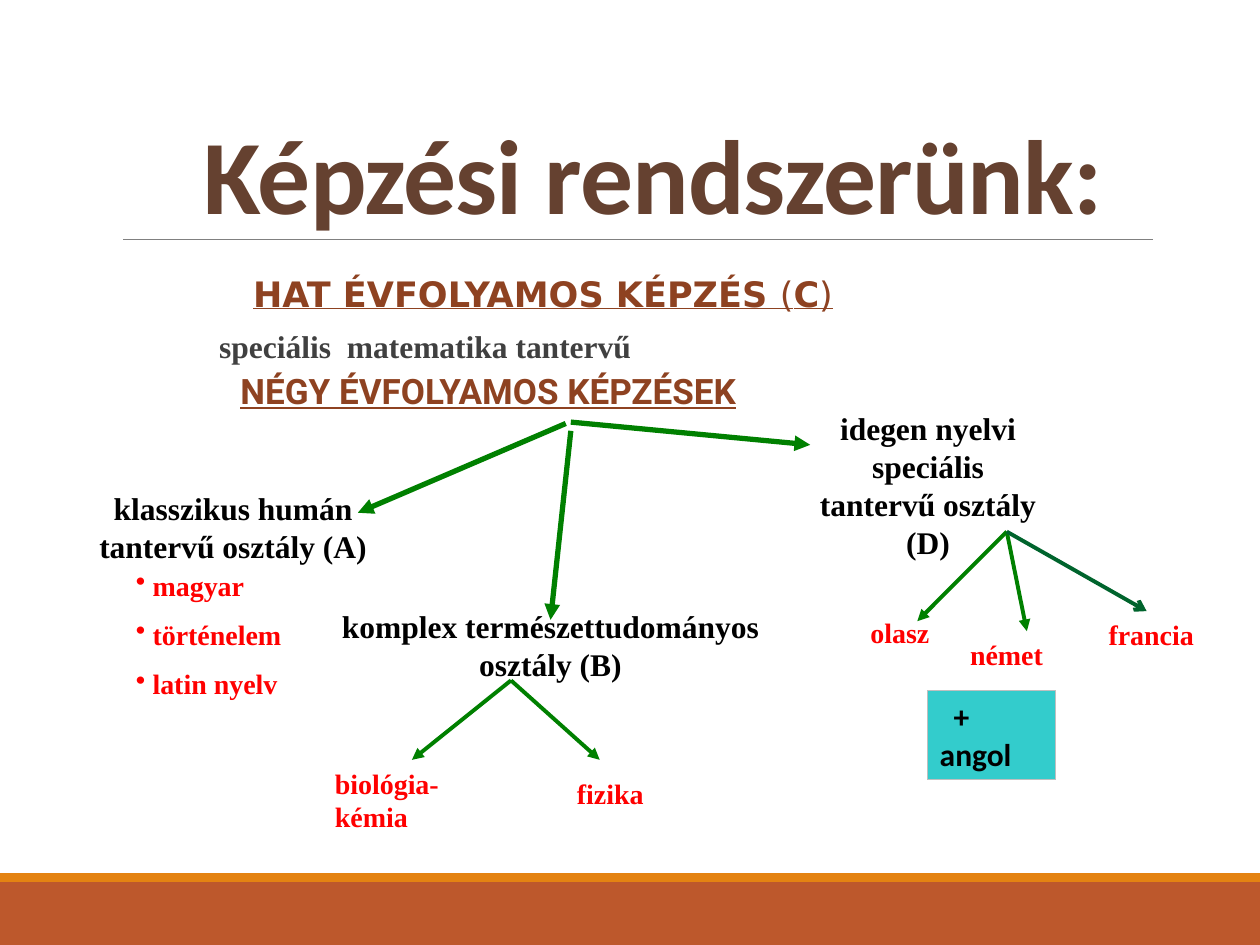
import pptx
import pptx.util
import pptx.dml.color
import pptx.enum.shapes
import pptx.enum.text
import pptx.oxml
from dataclasses import dataclass

Pt = pptx.util.Pt
Align = pptx.enum.text.PP_ALIGN
Anchor = pptx.enum.text.MSO_ANCHOR
NS = 'xmlns:a="http://schemas.openxmlformats.org/drawingml/2006/main"'


def rgb(code):
    return pptx.dml.color.RGBColor.from_string(code)


def node(tag, attrs=""):
    return pptx.oxml.parse_xml(f"<a:{tag} {NS} {attrs}/>")


@dataclass
class Theme:
    serif: str = "Times New Roman"
    sans: str = "Calibri"
    wide: str = "DejaVu Sans"
    slim: str = "Roboto"
    title: str = "654130"
    head: str = "8E4221"
    body: str = "404040"
    ink: str = "000000"
    leaf: str = "FF0000"
    arrow: str = "008000"
    dark: str = "00642D"
    rule: str = "808080"
    base: str = "BD582C"
    strip: str = "E48312"
    note: str = "33CCCC"
    edge: str = "BFBFBF"
    huge: float = 60.3
    large: int = 20
    mid: int = 18
    small: int = 16


class Board:
    """Draws on one slide; all lengths are points."""

    def __init__(self, slide, theme):
        self.shapes = slide.shapes
        self.theme = theme

    def rect(self, x, y, w, h, fill, edge=None):
        kind = pptx.enum.shapes.MSO_SHAPE.RECTANGLE
        shape = self.shapes.add_shape(kind, Pt(x), Pt(y), Pt(w), Pt(h))
        shape.shadow.inherit = False
        shape.fill.solid()
        shape.fill.fore_color.rgb = rgb(fill)
        if edge:
            shape.line.color.rgb = rgb(edge)
            shape.line.width = Pt(0.75)
        else:
            shape.line.fill.background()
        return shape

    def line(self, start, end, color, width, tip=None):
        kind = pptx.enum.shapes.MSO_CONNECTOR.STRAIGHT
        link = self.shapes.add_connector(kind, *map(Pt, start + end))
        link.line.color.rgb = rgb(color)
        link.line.width = Pt(width)
        if tip:
            link.line._get_or_add_ln().append(node("tailEnd", f'type="{tip}"'))
        link._element.spPr.append(node("effectLst"))

    def fan(self, ends, width):
        for start, end in ends:
            self.line(start, end, self.theme.arrow, width, "triangle")

    def box(self, x, y, w, h):
        frame = self.shapes.add_textbox(Pt(x), Pt(y), Pt(w), Pt(h)).text_frame
        frame.word_wrap = True
        return frame

    def run(self, para, text, font, size, color, bold=True, under=False):
        run = para.add_run()
        run.text = text
        run.font.name = font
        run.font.size = Pt(size)
        run.font.color.rgb = rgb(color)
        run.font.bold = bold
        run.font.underline = under
        return run

    def label(self, x, y, w, h, text):
        """Centred name of a class."""
        para = self.box(x, y, w, h).paragraphs[0]
        para.alignment = Align.CENTER
        self.run(para, text, self.theme.serif, self.theme.mid, self.theme.ink)

    def leaf(self, x, y, w, h, text):
        """Red name of a subject."""
        para = self.box(x, y, w, h).paragraphs[0]
        self.run(para, text, self.theme.serif, self.theme.small, self.theme.leaf)

    def head(self, x, y, w, h, parts, font, align):
        """Underlined heading; parts are (text, bold) pairs."""
        para = self.box(x, y, w, h).paragraphs[0]
        para.alignment = align
        for text, bold in parts:
            self.run(para, text, font, self.theme.large, self.theme.head, bold, True)

    def list(self, x, y, w, h, items):
        frame = self.box(x, y, w, h)
        for i, item in enumerate(items):
            para = frame.add_paragraph() if i else frame.paragraphs[0]
            para.space_before = Pt(9 if i else 0)
            props = para._p.get_or_add_pPr()
            props.set("marL", str(Pt(9.5)))
            props.set("indent", str(-Pt(9.5)))
            props.append(node("buChar", 'char="•"'))
            self.run(para, item, self.theme.serif, self.theme.small, self.theme.leaf)

    def title(self, x, y, w, h, text):
        frame = self.box(x, y, w, h)
        frame.vertical_anchor = Anchor.BOTTOM
        para = frame.paragraphs[0]
        para.line_spacing = 0.85
        run = self.run(para, text, self.theme.sans, self.theme.huge, self.theme.title)
        run.font._element.set("spc", "-50")

    def lead(self, x, y, w, h, text):
        frame = self.box(x, y, w, h)
        frame.margin_left = frame.margin_right = 0
        para = frame.paragraphs[0]
        para.line_spacing = 0.8
        self.run(para, text, self.theme.serif, self.theme.mid, self.theme.body)

    def note(self, x, y, w, h, top, low):
        shape = self.rect(x, y, w, h, self.theme.note, self.theme.edge)
        frame = shape.text_frame
        frame.word_wrap = True
        frame.vertical_anchor = Anchor.TOP
        para = frame.paragraphs[0]
        para.alignment = Align.LEFT
        para._p.get_or_add_pPr().set("indent", str(Pt(8)))
        style = self.theme.sans, self.theme.mid, self.theme.ink
        self.run(para, top, *style)
        para.add_line_break()
        self.run(para, low, *style)


def main():
    deck = pptx.Presentation()
    deck.slide_width, deck.slide_height = Pt(720), Pt(540)
    theme = Theme()
    board = Board(deck.slides.add_slide(deck.slide_layouts[6]), theme)

    board.rect(0, 504, 720, 36, theme.base)
    board.rect(0, 499, 720, 5, theme.strip)
    board.line((70.5, 136.8), (659, 136.8), theme.rule, 0.5)
    board.title(109, 82.8, 560, 55.4, "Képzési rendszerünk:")

    hat = [("HAT ÉVFOLYAMOS KÉPZÉS ", True), ("(", False), ("C", True), (")", False)]
    board.head(130.3, 151.9, 360, 31.7, hat, theme.wide, Align.CENTER)
    board.lead(125.3, 187.2, 291, 34.6, "speciális  matematika tantervű")
    four = [("NÉGY ÉVFOLYAMOS KÉPZÉSEK", True)]
    board.head(130.3, 207.4, 360, 31.7, four, theme.slim, Align.LEFT)

    board.fan([((323.3, 242), (204.5, 293)),
               ((326.2, 246.2), (314.6, 354.2)),
               ((326.2, 241.2), (463, 254.2))], 3)
    board.label(48.2, 275.8, 170, 50.4, "klasszikus humán tantervű osztály (A)")
    board.label(184.3, 343.4, 260.6, 51, "komplex természettudományos osztály (B)")
    board.label(456.5, 230.4, 147.6, 94.3, "idegen nyelvi speciális tantervű osztály (D)")

    board.list(70.6, 321.1, 101.5, 85, ["magyar", "történelem", "latin nyelv"])

    split = (292, 388.8)
    board.fan([(split, (235.4, 434.2)), (split, (342.7, 434.2))], 2.25)
    board.leaf(184.3, 434.2, 108, 46, "biológia-kémia")
    board.leaf(322.6, 440, 73.4, 26.6, "fizika")

    fork = (575.3, 303.8)
    board.fan([(fork, (524.2, 355)), (fork, (586.8, 360.7))], 2.25)
    board.line(fork, (655.2, 349.2), theme.dark, 2.25, "arrow")
    board.leaf(490.3, 348.5, 102.2, 26.6, "olasz")
    board.leaf(547.2, 360.7, 85, 26.6, "német")
    board.leaf(626.4, 349.2, 74.2, 26.6, "francia")
    board.note(529.9, 394.6, 73.4, 51, "+", "angol")

    deck.save("out.pptx")


if __name__ == "__main__":
    main()
